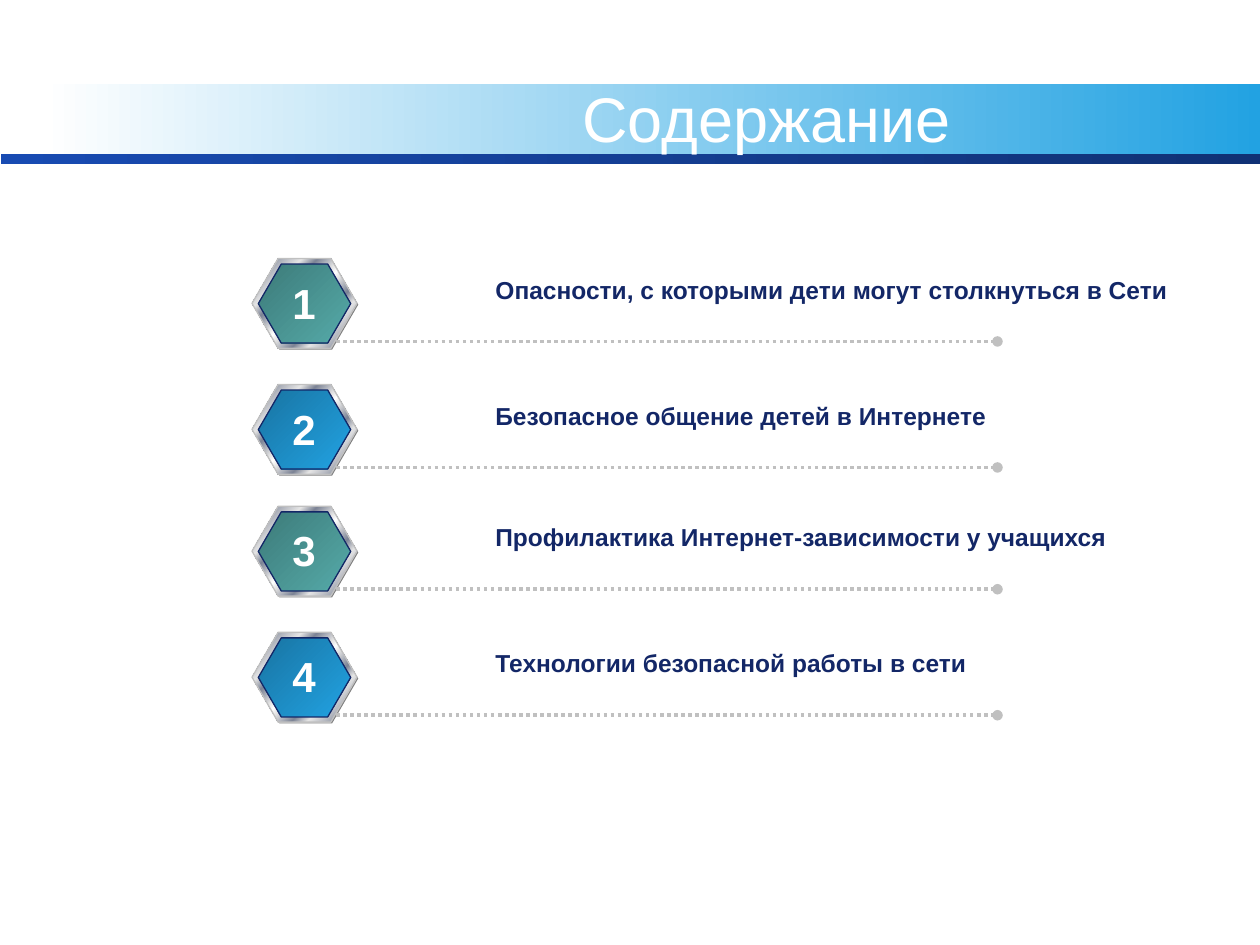
"""Build the contents slide: a title band and four numbered hexagon rows."""
import pptx
import pptx.dml.color
import pptx.enum.dml
import pptx.enum.shapes
import pptx.enum.text
import pptx.oxml
import pptx.oxml.ns
import pptx.util
from lxml import etree

RGB = pptx.dml.color.RGBColor.from_string
SHAPE = pptx.enum.shapes.MSO_SHAPE
ALIGN = pptx.enum.text.PP_ALIGN
FIT = pptx.enum.text.MSO_AUTO_SIZE
qn = pptx.oxml.ns.qn

THEME = {
    "navy": "132767", "white": "FFFFFF", "silver": "C0C0C0", "shade": "808080",
    "band": [(0, "FFFFFF"), (100, "22A2E2")],
    "rule": [(0, "184BB2"), (100, "103175")],
    "teal": [(0, "3D7A79"), (100, "55ABA9")],
    "blue": [(0, "1874A2"), (100, "22A2E2")],
    "metal": [(0, "E6E6E6"), (7, "7D8496"), (26, "E6E6E6"), (34, "7D8496"),
              (46, "E6E6E6"), (50, "FFFFFF"), (54, "E6E6E6"), (66, "7D8496"),
              (74, "E6E6E6"), (93, "7D8496"), (100, "E6E6E6")],
    "title": {"name": "Arial", "size": pptx.util.Pt(36), "bold": False},
    "number": {"name": "Arial", "size": pptx.util.Pt(24), "bold": True},
    "label": {"name": "Arial", "size": pptx.util.Pt(14), "bold": True},
}

prs = pptx.Presentation()
prs.slide_width, prs.slide_height = pptx.util.Inches(10), pptx.util.Inches(7.5)
slide = prs.slides.add_slide(prs.slide_layouts[6])
COL, ROW = prs.slide_width / 60, prs.slide_height / 45


def add_filled(shapes, kind, box, fill, angle=0, line=None):
    x, y, w, h = box
    s = shapes.add_shape(kind, int(x * COL), int(y * ROW), int(w * COL), int(h * ROW))
    s.shadow.inherit = False
    if isinstance(fill, str):
        s.fill.solid()
        s.fill.fore_color.rgb = RGB(fill)
    else:
        s.fill.gradient()
        s.fill.gradient_angle = angle
        stops = s._element.spPr.find(qn("a:gradFill")).find(qn("a:gsLst"))
        for stop in list(stops):
            stops.remove(stop)
        for pos, color in fill:
            stop = etree.SubElement(stops, qn("a:gs"), pos=str(pos * 1000))
            etree.SubElement(stop, qn("a:srgbClr"), val=color)
    if line:
        s.line.color.rgb = RGB(line)
        s.line.width = pptx.util.Pt(0.75)
    else:
        s.line.fill.background()
    return s


def add_text(box, text, style, color, align, frame):
    x, y, w, h = box
    s = slide.shapes.add_textbox(int(x * COL), int(y * ROW), int(w * COL), int(h * ROW))
    tf = s.text_frame
    for name, value in frame.items():
        setattr(tf, name, value)
    p = tf.paragraphs[0]
    p.alignment = align
    r = p.add_run()
    r.text = text
    for name, value in THEME[style].items():
        setattr(r.font, name, value)
    r.font.color.rgb = RGB(THEME[color])


add_filled(slide.shapes, SHAPE.RECTANGLE, (2, 4, 58, 3.5), THEME["band"])
add_filled(slide.shapes, SHAPE.RECTANGLE, (0.06, 7.32, 59.94, 0.48), THEME["rule"])
add_text((16, 4, 41, 3.2), "Содержание", "title", "white", ALIGN.CENTER,
         {"word_wrap": True, "auto_size": FIT.NONE,
          "vertical_anchor": pptx.enum.text.MSO_ANCHOR.MIDDLE})

SNUG = {"word_wrap": False, "auto_size": FIT.SHAPE_TO_FIT_TEXT}
ITEMS = [
    (12.3, 33.4, "teal", "Опасности, с которыми дети могут столкнуться в Сети"),
    (18.3, 24.7, "blue", "Безопасное общение детей в Интернете"),
    (24.1, 30.5, "teal", "Профилактика Интернет-зависимости у учащихся"),
    (30.1, 23.8, "blue", "Технологии безопасной работы в сети"),
]

for number, (top, width, hue, label) in enumerate(ITEMS, 1):
    badge = slide.shapes.add_group_shape()
    for box, fill, line in [
        ((12.06, top + 0.06, 5, 4.3), THEME["shade"], None),
        ((12, top, 5, 4.3), THEME["metal"], THEME["silver"]),
        ((12.3, top + 0.27, 4.4, 3.78), THEME[hue], THEME["navy"]),
    ]:
        s = add_filled(badge.shapes, SHAPE.HEXAGON, box, fill, 315, line)
        s.adjustments[0], s.adjustments[1] = 0.29, 1.15

    y = int((top + 3.96) * ROW)
    s = slide.shapes.add_connector(pptx.enum.shapes.MSO_CONNECTOR.STRAIGHT,
                                   int(16 * COL), y, int(47.5 * COL), y)
    s.line.color.rgb = RGB(THEME["silver"])
    s.line.width = pptx.util.Pt(2)
    s.line.dash_style = pptx.enum.dml.MSO_LINE.ROUND_DOT
    etree.SubElement(s.line._get_or_add_ln(), qn("a:tailEnd"), type="oval")
    etree.SubElement(s._element.spPr, qn("a:effectLst"))

    add_text((23, top + 0.48, width, 2.04), label, "label", "navy", ALIGN.LEFT, SNUG)
    add_text((13.3, top + 0.6, 2.35, 3), str(number), "number", "white", ALIGN.CENTER, SNUG)

prs.save("out.pptx")
